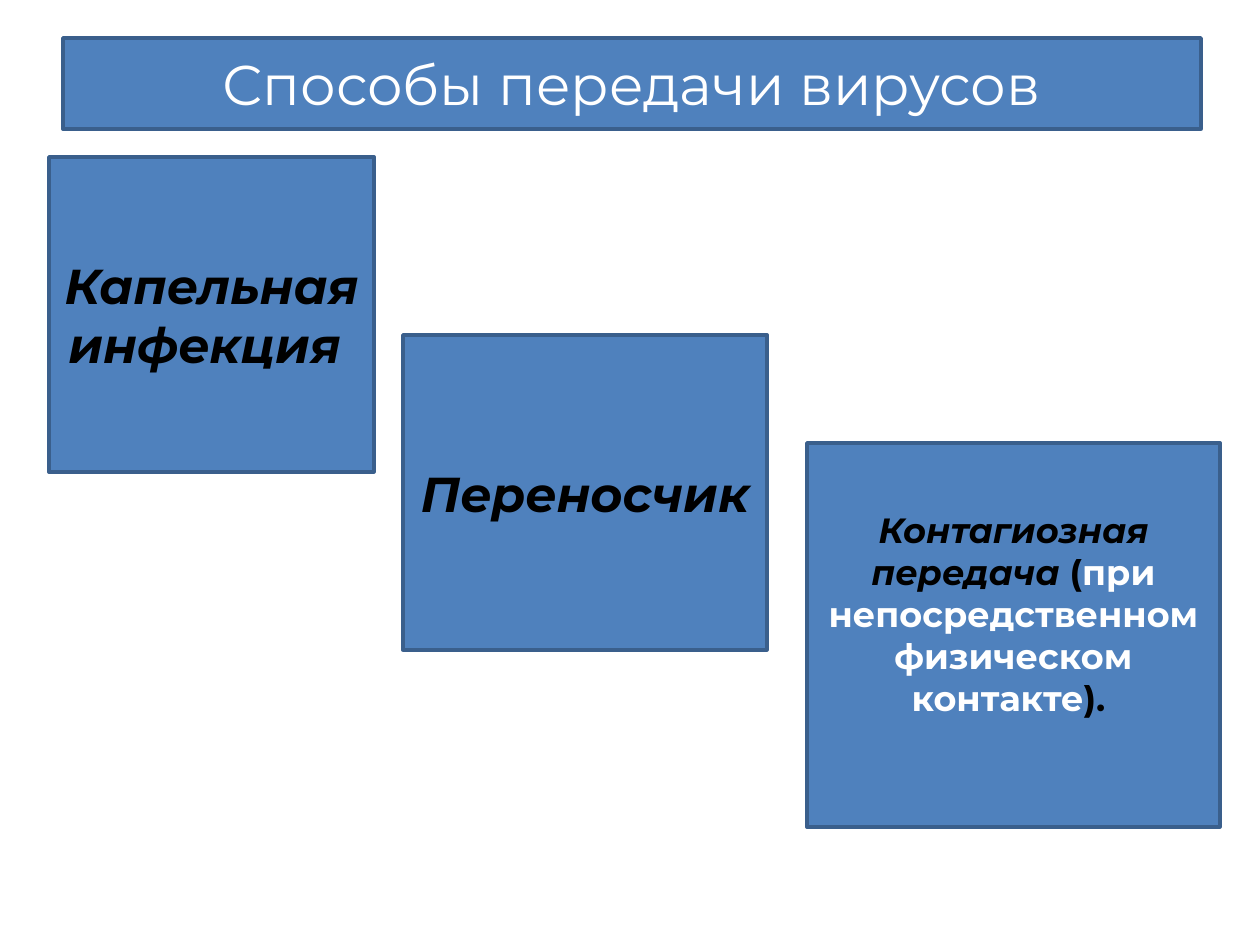
from dataclasses import dataclass

from pptx import Presentation
from pptx import util as u
from pptx.dml.color import RGBColor
from pptx.enum import shapes, text

EMU_PER_PX = 914400 / 126


@dataclass(frozen=True)
class Theme:
    font: str = "Montserrat"
    panel: str = "4F81BD"
    outline: str = "3A5F8C"
    light: str = "FFFFFF"
    dark: str = "000000"
    title_size: int = 32
    label_size: int = 28
    detail_size: int = 20
    outline_width: int = 2


THEME = Theme()


def px(length):
    return u.Emu(round(length * EMU_PER_PX))


def add_text(paragraph, wording, size, color=THEME.dark, bold=False, italic=False):
    run = paragraph.add_run()
    run.text = wording
    font = run.font
    font.name = THEME.font
    font.size = u.Pt(size)
    font.bold = bold
    font.italic = italic
    font.color.rgb = RGBColor.from_string(color)


def style_panel(panel):
    """Apply the shared fill, outline and centred text; return the first paragraph."""
    panel.fill.solid()
    panel.fill.fore_color.rgb = RGBColor.from_string(THEME.panel)
    panel.line.color.rgb = RGBColor.from_string(THEME.outline)
    panel.line.width = u.Pt(THEME.outline_width)
    frame = panel.text_frame
    frame.word_wrap = True
    frame.auto_size = text.MSO_AUTO_SIZE.NONE
    frame.vertical_anchor = text.MSO_ANCHOR.MIDDLE
    paragraph = frame.paragraphs[0]
    paragraph.alignment = text.PP_ALIGN.CENTER
    return paragraph


def add_heading(slide, wording, left, top, width, height):
    heading = slide.shapes.title
    heading.left, heading.top = px(left), px(top)
    heading.width, heading.height = px(width), px(height)
    add_text(style_panel(heading), wording, THEME.title_size, color=THEME.light)


def add_route(slide, parts, size, left, top, width, height, lift=0):
    """Add a transmission route; lift is extra room below its text."""
    route = slide.shapes.add_shape(
        shapes.MSO_SHAPE.RECTANGLE, px(left), px(top), px(width), px(height))
    route.shadow.inherit = False
    paragraph = style_panel(route)
    route.text_frame.margin_bottom += px(lift)
    for wording, look in parts:
        add_text(paragraph, wording, size, bold=True, **look)


def main():
    deck = Presentation()
    deck.slide_width, deck.slide_height = u.Inches(10), u.Inches(7.5)
    slide = deck.slides.add_slide(deck.slide_layouts.get_by_name("Title Only"))

    add_heading(slide, "Способы передачи вирусов", 63, 38, 1138, 91)

    emphasis = {"italic": True}
    contagion = [
        ("Контагиозная передача ", emphasis),
        ("(", {}),
        ("при непосредственном физическом контакте", {"color": THEME.light}),
        ("). ", {}),
    ]
    add_route(slide, [("Капельная инфекция ", emphasis)], THEME.label_size,
              49, 157, 325, 315)
    add_route(slide, [("Переносчик", emphasis)], THEME.label_size,
              403, 335, 364, 315)
    add_route(slide, contagion, THEME.detail_size, 807, 443, 413, 384, lift=42)

    deck.save("out.pptx")


if __name__ == "__main__":
    main()
